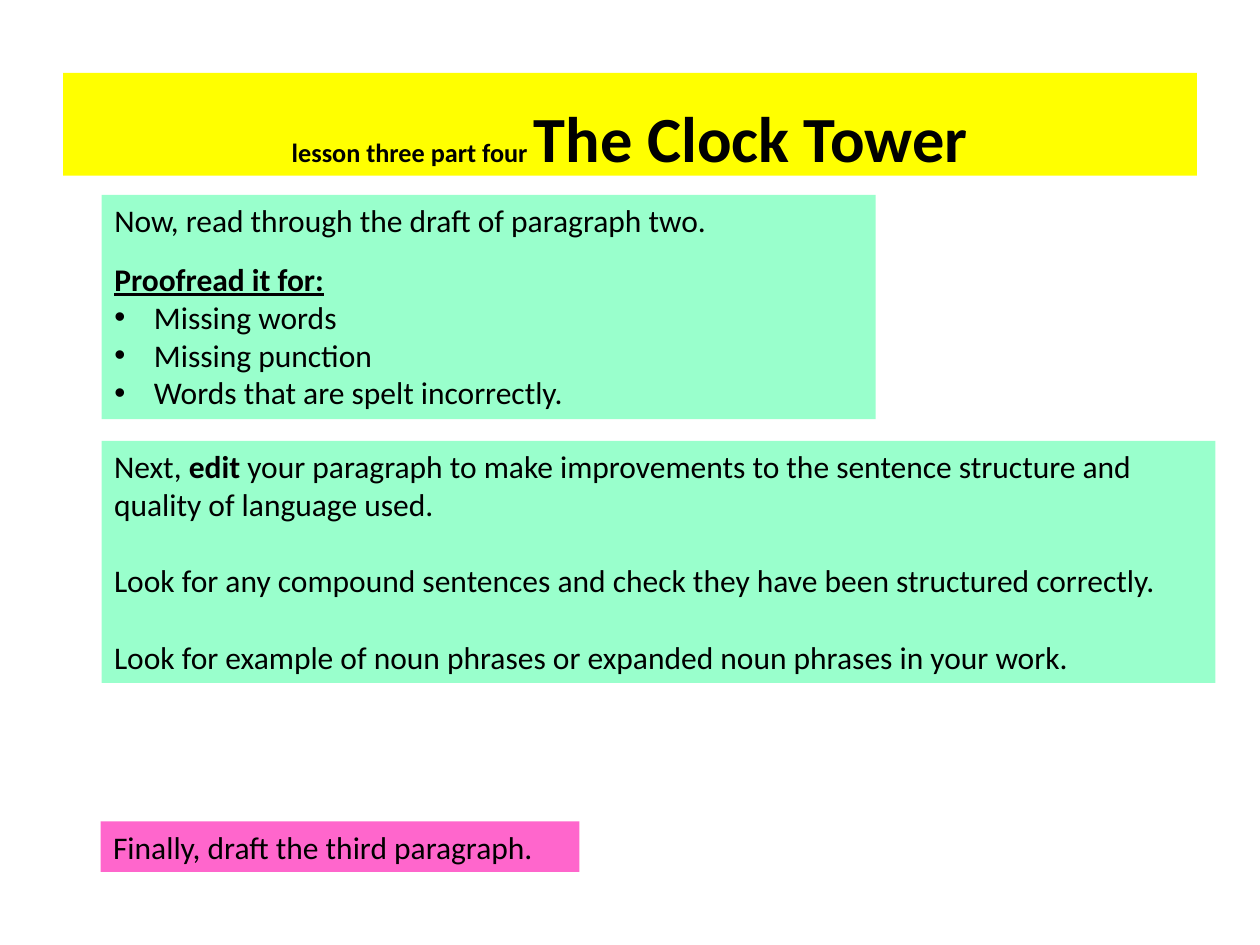
from lxml import etree
from pptx import Presentation
from pptx.dml.color import RGBColor
from pptx.enum import text
from pptx.oxml.ns import qn
from pptx.util import Cm, Pt

FONT, BLACK, MINT = "Calibri", "000000", "99FFCC"


def colour(fmt, value):
    """Give a fill or a font a solid hex colour."""
    if hasattr(fmt, "solid"):
        fmt.solid()
        fmt.fore_color.rgb = RGBColor.from_string(value)
    else:
        fmt.color.rgb = RGBColor.from_string(value)


def place(sp, box, fill, anchor=text.MSO_ANCHOR.TOP):
    """Put a shape in its box, in centimetres, and prepare its text frame."""
    sp.left, sp.top, sp.width, sp.height = (Cm(v) for v in box)
    colour(sp.fill, fill)
    tf = sp.text_frame
    tf.word_wrap = True
    tf.auto_size = text.MSO_AUTO_SIZE.NONE
    tf.vertical_anchor = anchor
    return tf


def add_paragraph(tf, runs, first=False, before=0, bullet=False):
    """Write one paragraph of (text, bold) runs, with or without a bullet."""
    p = tf.paragraphs[0] if first else tf.add_paragraph()
    p.space_before = Pt(before)
    p.alignment = text.PP_ALIGN.LEFT
    p.font.name, p.font.size = FONT, Pt(18)
    colour(p.font, BLACK)
    for words, bold in runs:
        r = p.add_run()
        r.text = words
        if bold:
            r.font.bold = True
    pPr = p._p.get_or_add_pPr()
    indent = Cm(0.8) if bullet else 0
    pPr.set("marL", str(indent))
    pPr.set("indent", str(-indent))
    mark = etree.Element(qn("a:buChar" if bullet else "a:buNone"))
    if bullet:
        mark.set("char", "•")
    pPr.find(qn("a:spcBef")).addnext(mark)
    return p


def title_banner(s, box):
    """Fill the title placeholder with the lesson label and the story name."""
    tf = place(s.shapes.title, box, "FFFF00", text.MSO_ANCHOR.BOTTOM)
    tf.margin_top = tf.margin_bottom = 0
    p = tf.paragraphs[0]
    p.alignment = text.PP_ALIGN.CENTER
    p.font.name, p.font.bold = FONT, True
    colour(p.font, BLACK)
    for words, size in (("lesson three part four ", 15), ("The Clock Tower", 36.8)):
        r = p.add_run()
        r.text = words
        r.font.size = Pt(size)


def proofread_list(s, box):
    """Fill the body placeholder with the proofreading checklist."""
    tf = place(s.placeholders[1], box, MINT)
    add_paragraph(tf, [("Now, read through the draft of paragraph two.", False)], first=True)
    heading = add_paragraph(tf, [("Proofread it for:", True)], before=12)
    heading.runs[0].font.underline = True
    for item in ("Missing words", "Missing punction", "Words that are spelt incorrectly."):
        add_paragraph(tf, [(item, False)], bullet=True)


def note(s, box, fill, paragraphs):
    """Add a filled text box whose paragraphs stand one line apart."""
    tf = place(s.shapes.add_textbox(0, 0, 0, 0), box, fill)
    for i, runs in enumerate(paragraphs):
        add_paragraph(tf, runs, first=i == 0, before=22 if i else 0)


def main():
    """Build the lesson slide."""
    prs = Presentation()
    prs.slide_width, prs.slide_height = Cm(25.4), Cm(19.05)
    s = prs.slides.add_slide(prs.slide_layouts[1])
    title_banner(s, (1.27, 1.47, 22.86, 2.07))
    proofread_list(s, (2.05, 3.93, 15.6, 4.52))
    note(s, (2.05, 8.89, 22.45, 4.88), MINT, [
        [("Next, ", False), ("edit ", True),
         ("your paragraph to make improvements to the sentence structure "
          "and quality of language used.", False)],
        [("Look for any compound sentences and check they have been "
          "structured correctly.", False)],
        [("Look for example of noun phrases or expanded noun phrases in your work.", False)],
    ])
    note(s, (2.03, 16.56, 9.65, 1.02), "FF66CC",
         [[("Finally, draft the third paragraph.", False)]])
    prs.save("out.pptx")


if __name__ == "__main__":
    main()
